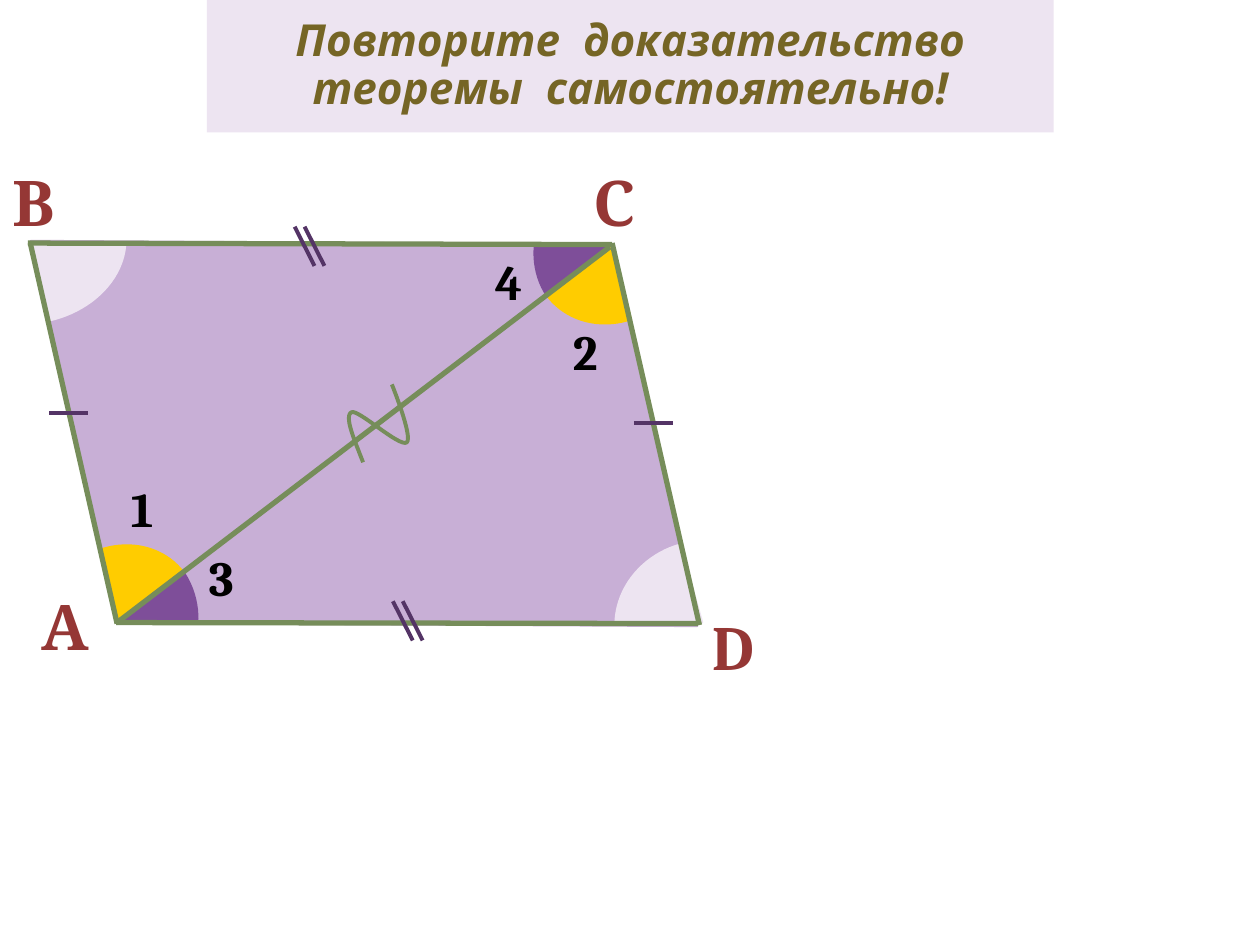
from lxml import etree
from pptx import Presentation, util as u
from pptx.dml.color import RGBColor
from pptx.enum import shapes as sh, text as tx
from pptx.oxml.ns import qn

GREEN, DARK, LILAC, PALE = "768D5A", "543466", "C8AFD6", "EDE4F1"
YELLOW, PURPLE = "FFCC00", "7E4E99"


def rgb(code):
    return RGBColor.from_string(code)


def place(kind, box, turn, fill, edge, adjs):
    item = slide.shapes.add_shape(kind, *map(u.Cm, box))
    item.rotation = turn
    item.shadow.inherit = False
    for i, adj in enumerate(adjs):
        item.adjustments[i] = adj
    item.fill.solid()
    item.fill.fore_color.rgb = rgb(fill)
    if edge:
        item.line.color.rgb = rgb(fill)
        item.line.width = u.Pt(1.25)
    else:
        item.line.fill.background()


deck = Presentation()
deck.slide_width, deck.slide_height = u.Cm(25.4), u.Cm(19.05)
slide = deck.slides.add_slide(deck.slide_layouts[5])

title = slide.shapes.title
title.left, title.top, title.width, title.height = map(u.Cm, (4.17, 0, 17.07, 2.67))
title.fill.solid()
title.fill.fore_color.rgb = rgb(PALE)
frame = title.text_frame
frame.text = "Повторите  доказательство теоремы  самостоятельно!"
frame.word_wrap = True
frame.auto_size = tx.MSO_AUTO_SIZE.NONE
frame.vertical_anchor = tx.MSO_ANCHOR.MIDDLE
para = frame.paragraphs[0]
para.alignment = tx.PP_ALIGN.CENTER
para.line_spacing = 0.9
font = para.font
font.name, font.size = "Noto Sans", u.Pt(25.2)
font.bold = font.italic = True
font.color.rgb = rgb("756525")

tri = sh.MSO_SHAPE.ISOSCELES_TRIANGLE
for box, turn in [((3.25, 8.05, 12.52, 7.11), 142.8), ((-1.09, 2.31, 12.55, 7.14), 322.8)]:
    place(tri, box, turn, LILAC, True, [0.26])

for box, turn, fill, adjs in [
    ((0.91, 10.87, 2.97, 3.3), 53.3, YELLOW, (121.35, 161.76)),
    ((10.82, 3.18, 3.1, 3.45), 226.8, YELLOW, (125.78, 165.56)),
    ((0.58, 10.87, 3.48, 3.33), 116.6, PURPLE, (124.14, 146.2)),
    ((10.62, 3.48, 3.3, 2.95), 297.8, PURPLE, (121.24, 145.85)),
    ((12.4, 10.92, 3.51, 3.25), 345.7, PALE, (116.87, 161.06)),
    ((-1.27, 3.43, 3.81, 3.07), 168.7, PALE, (114.51, 160.57)),
]:
    place(sh.MSO_SHAPE.PIE, box, turn, fill, fill == PALE, adjs)

curves = [
    [(7.32, 9.32), (7.14, 8.86), (6.93, 8.38), (7.09, 8.31)],
    [(7.09, 8.31), (7.24, 8.26), (8.05, 9.02), (8.2, 8.92)],
    [(8.2, 8.92), (8.33, 8.81), (7.9, 7.75), (7.9, 7.75)],
]
steps = 16
dots = []
for curve in curves:
    for i in range(1, steps + 1):
        t = i / steps
        mix = ((1 - t) ** 3, 3 * t * (1 - t) ** 2, 3 * t * t * (1 - t), t ** 3)
        dots.append([u.Cm(sum(m * p[k] for m, p in zip(mix, curve))) for k in (0, 1)])
pen = slide.shapes.build_freeform(*map(u.Cm, curves[0][0]))
pen.add_line_segments(dots, close=False)
mark = pen.convert_to_shape()
mark.shadow.inherit = False
mark.fill.background()
mark.line.color.rgb = rgb(GREEN)
mark.line.width = u.Pt(2.25)

sides = [
    (2.36, 12.55, 12.29, 4.98),
    (12.34, 4.9, 14.1, 12.6),
    (2.34, 12.55, 14.07, 12.57),
    (0.56, 4.9, 12.34, 4.93),
    (0.61, 4.9, 2.36, 12.57),
]
ticks = [(x, y, x + 0.79, y) for x, y in [(12.78, 8.53), (0.99, 8.33)]]
for x, y in [(5.94, 4.57), (7.92, 12.12)]:
    ticks += [(x + gap, y, x + gap + 0.4, y + 0.79) for gap in (0.2, 0)]
for ends, tint, width in [(s, GREEN, 3) for s in sides] + [(t, DARK, 2.25) for t in ticks]:
    line = slide.shapes.add_connector(sh.MSO_CONNECTOR.STRAIGHT, *map(u.Cm, ends))
    line.line.color.rgb = rgb(tint)
    line.line.width = u.Pt(width)
    etree.SubElement(line._element.spPr, qn("a:effectLst"))

names = [("А", 0.58, 11.71, 1.3), ("В", 0, 3.18, 1.22), ("С", 11.71, 3.18, 1.19), ("D", 14.1, 12.12, 1.32)]
marks = [("1", 2.39, 9.53, 0.99), ("2", 11.3, 6.35, 0.99), ("3", 3.96, 10.92, 0.99), ("4", 9.73, 4.95, 0.79)]
for group, high, size, tint in [(names, 1.8, 36, "953735"), (marks, 1.45, 28, "000000")]:
    for word, x, y, wide in group:
        label = slide.shapes.add_textbox(*map(u.Cm, (x, y, wide, high)))
        frame = label.text_frame
        frame.text = word
        frame.word_wrap = group is marks
        frame.auto_size = tx.MSO_AUTO_SIZE.SHAPE_TO_FIT_TEXT
        font = frame.paragraphs[0].font
        font.name, font.size, font.bold = "Cambria", u.Pt(size), True
        font.color.rgb = rgb(tint)

deck.save("out.pptx")
